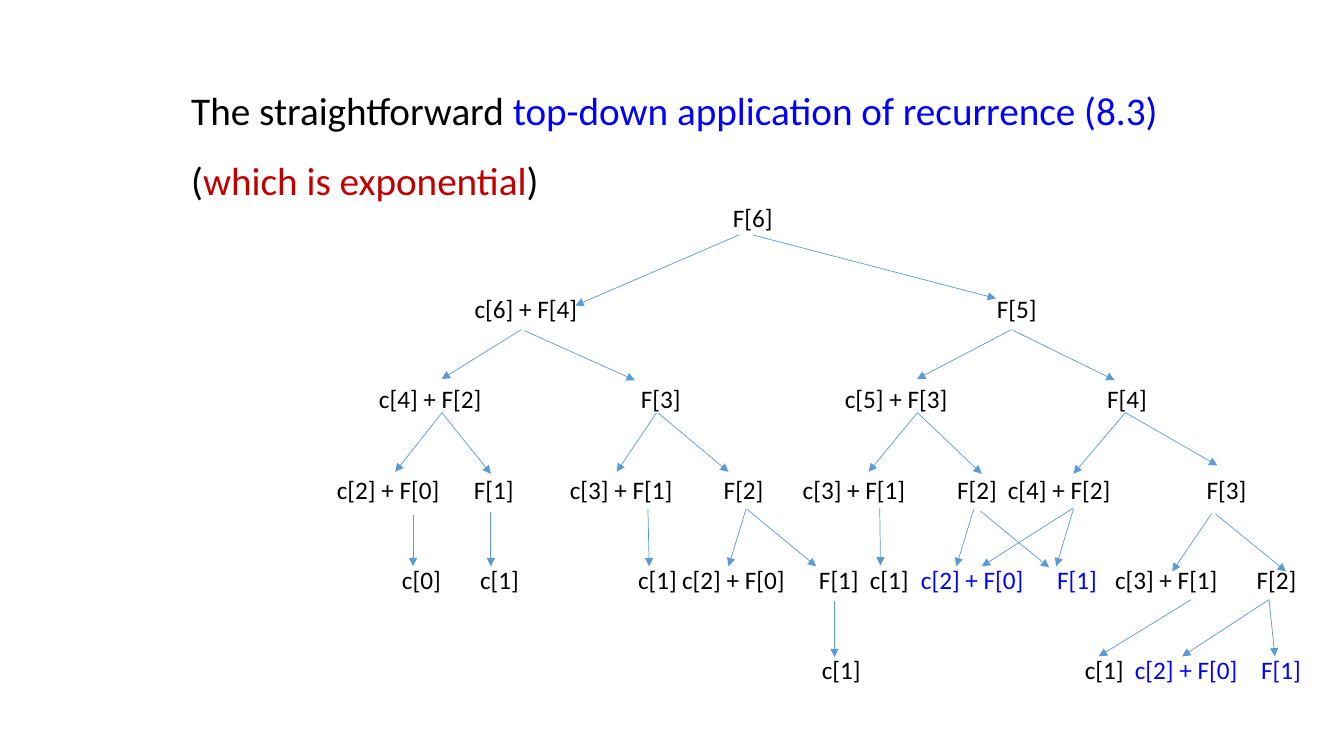
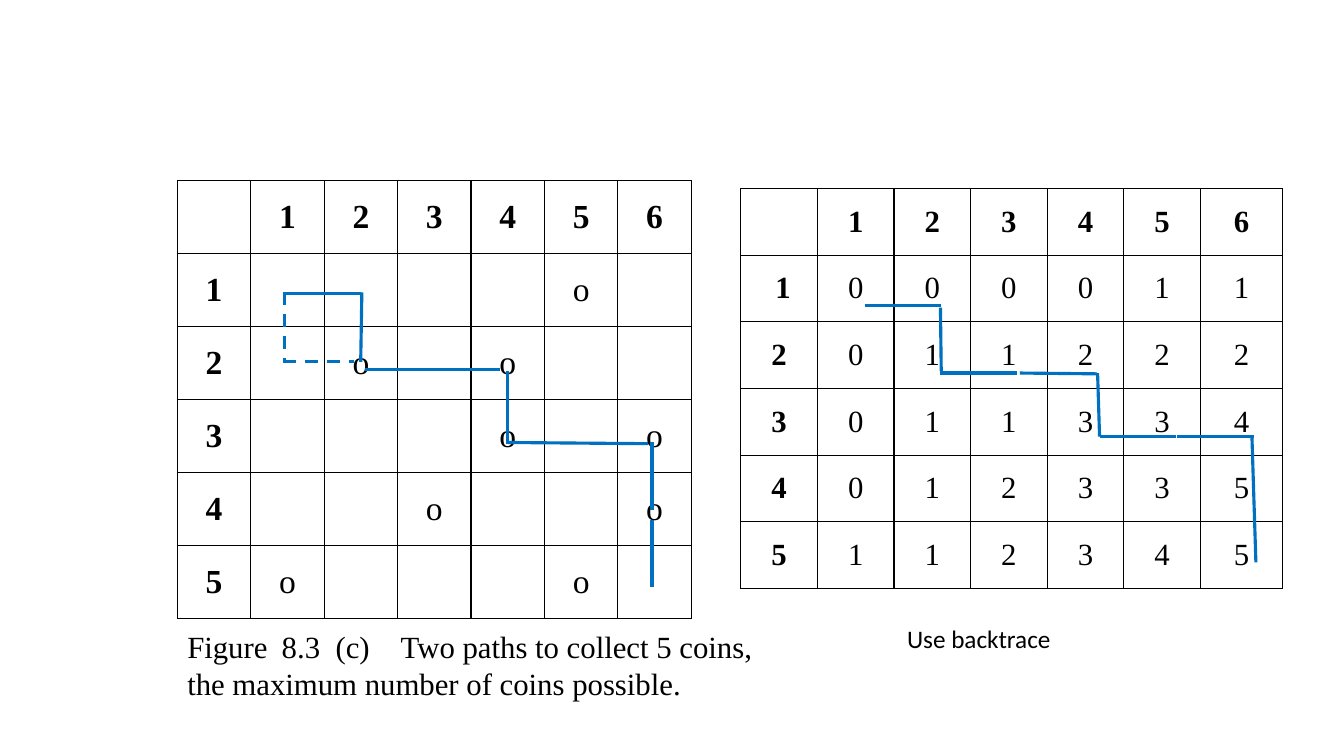
from dataclasses import dataclass
from typing import NamedTuple

from lxml import etree
from pptx import Presentation
from pptx.dml.color import RGBColor
from pptx.enum.dml import MSO_LINE
from pptx.enum.shapes import MSO_CONNECTOR
from pptx.enum.text import MSO_ANCHOR, MSO_AUTO_SIZE, PP_ALIGN
from pptx.oxml.ns import qn
from pptx.util import Cm, Pt

STRAIGHT = MSO_CONNECTOR.STRAIGHT
DASH = MSO_LINE.DASH
MIDDLE = MSO_ANCHOR.MIDDLE
GROW = MSO_AUTO_SIZE.SHAPE_TO_FIT_TEXT
CENTER = PP_ALIGN.CENTER

COLORS = {
    "ink": "000000",
    "paper": "FFFFFF",
    "blue": "0000FF",
    "red": "C00000",
    "arrow": "5B9BD5",
    "route": "0070C0",
}
SANS, SERIF = "Calibri", "Times New Roman"
TITLE_FONT = {"name": SANS, "size": Pt(28)}
BODY_FONT = {"name": SANS, "size": Pt(18)}
CAPTION_FONT = {"name": SERIF, "size": Pt(22)}
COIN_FONT = {"name": SERIF, "size": Pt(24)}
CELL_FORMAT = {
    "vertical_anchor": MIDDLE,
    "margin_left": Cm(0.18),
    "margin_right": Cm(0.18),
    "margin_top": 0,
    "margin_bottom": 0,
}
BORDER_SIDES = ("a:lnL", "a:lnR", "a:lnT", "a:lnB")
TEXT_INSET = 0.25


# Lengths in these records are centimetres
class Box(NamedTuple):
    left: float
    top: float
    width: float
    height: float


class Segment(NamedTuple):
    x1: float
    y1: float
    x2: float
    y2: float
    dashed: bool = False


class Piece(NamedTuple):
    text: str
    color: str = "ink"


class Node(NamedTuple):
    left: float
    text: str
    color: str = "ink"


@dataclass
class Grid:
    left: float
    top: float
    columns: list[float]
    row_height: float
    font: dict
    rows: list[list[str]]


# Recursion tree, one list of nodes for each level
TREE_BOX = Box(4.09, 4.98, 29.64, 13.34)
LEVELS = [
    [Node(18.47, "F[6]")],
    [Node(11.96, "c[6] + F[4]"), Node(25.12, "F[5]")],
    [Node(9.55, "c[4] + F[2]"), Node(16.15, "F[3]"),
     Node(21.29, "c[5] + F[3]"), Node(27.9, "F[4]")],
    [Node(8.49, "c[2] + F[0]"), Node(11.94, "F[1]"),
     Node(14.36, "c[3] + F[1]"), Node(18.24, "F[2]"),
     Node(20.23, "c[3] + F[1]"), Node(24.12, "F[2]"),
     Node(25.4, "c[4] + F[2]"), Node(30.41, "F[3]")],
    [Node(10.13, "c[0]"), Node(12.1, "c[1]"), Node(16.08, "c[1]"),
     Node(17.19, "c[2] + F[0]"), Node(20.64, "F[1]"), Node(21.92, "c[1]"),
     Node(23.21, "c[2] + F[0]", "blue"), Node(26.64, "F[1]", "blue"),
     Node(28.1, "c[3] + F[1]"), Node(31.67, "F[2]")],
    [Node(20.71, "c[1]"), Node(27.34, "c[1]"),
     Node(28.6, "c[2] + F[0]", "blue"), Node(31.78, "F[1]", "blue")],
]
CALLS = [
    # From F[6]
    Segment(18.62, 5.92, 14.5, 7.7), Segment(18.97, 5.92, 25.1, 7.52),
    # From F[4] and F[5]
    Segment(13.13, 8.31, 11.13, 9.55), Segment(13.21, 8.33, 16, 9.58),
    Segment(25.48, 8.31, 23.11, 9.55), Segment(25.5, 8.31, 28.09, 9.58),
    # From the third level
    Segment(11.13, 10.41, 9.96, 11.89), Segment(11.13, 10.39, 12.37, 11.94),
    Segment(16.54, 10.41, 15.54, 11.89), Segment(16.59, 10.41, 18.36, 11.89),
    Segment(23.11, 10.41, 21.89, 11.89), Segment(23.11, 10.39, 24.74, 11.94),
    Segment(28.35, 10.41, 27.05, 11.94), Segment(28.35, 10.39, 30.68, 11.73),
    # From the fourth level
    Segment(10.41, 12.98, 10.41, 14.27), Segment(12.37, 12.9, 12.37, 14.27),
    Segment(16.33, 12.83, 16.36, 14.27), Segment(18.8, 12.83, 18.36, 14.27),
    Segment(18.82, 12.83, 20.57, 14.27), Segment(24.54, 12.83, 24.1, 14.27),
    Segment(24.71, 12.88, 26.44, 14.3), Segment(27.05, 12.8, 24.74, 14.27),
    Segment(27.05, 12.83, 26.62, 14.27), Segment(22.17, 12.8, 22.19, 14.25),
    Segment(30.53, 12.95, 29.54, 14.4), Segment(30.63, 12.95, 32.41, 14.4),
    # From the fifth level
    Segment(30.02, 15.11, 27.69, 16.54), Segment(31.98, 15.11, 29.79, 16.54),
    Segment(31.98, 15.11, 32.13, 16.54), Segment(21.03, 15.14, 21.03, 16.56),
]

# Coin board and table of best totals
HEADER = ["", "1", "2", "3", "4", "5", "6"]
COINS = Grid(4.47, 4.55, [1.85] * 7, 1.84, COIN_FONT, [
    HEADER,
    ["1", "", "", "", "", "o", ""],
    ["2", "", "o", "", "o", "", ""],
    ["3", "", "", "", "o", "", "o"],
    ["4", "", "", "o", "", "", "o"],
    ["5", "o", "", "", "", "o", ""],
])
TOTALS = Grid(18.67, 4.75, [1.93] * 6 + [2.08], 1.68, CAPTION_FONT, [
    HEADER,
    [" 1", "0", "0", "0", "0", "1", "1"],
    ["2", "0", "1", "1", "2", "2", "2"],
    ["3", "0", "1", "1", "3", "3", "4"],
    ["4", "0", "1", "2", "3", "3", "5"],
    ["5", "1", "1", "2", "3", "4", "5"],
])
COIN_ROUTE = [
    Segment(7.16, 7.39, 9.09, 7.39), Segment(9.12, 7.37, 9.09, 9.12),
    Segment(7.16, 7.37, 7.16, 9.12, True), Segment(9.19, 9.32, 12.6, 9.32),
    Segment(12.8, 9.35, 12.8, 11.18), Segment(7.14, 9.12, 8.92, 9.12, True),
    Segment(12.8, 11.15, 16.33, 11.18), Segment(16.43, 11.15, 16.43, 12.85),
    Segment(16.43, 13.11, 16.43, 14.78),
]
BACKTRACE = [
    Segment(21.79, 7.7, 23.72, 7.7), Segment(23.7, 7.75, 23.72, 9.35),
    Segment(23.7, 9.4, 25.63, 9.4), Segment(25.7, 9.4, 27.64, 9.42),
    Segment(27.66, 9.4, 27.71, 11), Segment(27.71, 11, 29.64, 11),
    Segment(29.67, 11, 31.6, 11), Segment(31.55, 11, 31.6, 12.6),
    Segment(31.6, 12.6, 31.65, 14.17),
]


def rgb(color: str) -> RGBColor:
    return RGBColor.from_string(COLORS[color])


def apply(target, values: dict) -> None:
    for name, value in values.items():
        setattr(target, name, value)


def add_pieces(paragraph, pieces: list[Piece], font: dict) -> None:
    for piece in pieces:
        run = paragraph.add_run()
        run.text = piece.text
        apply(run.font, font)
        run.font.color.rgb = rgb(piece.color)


def set_tabs(paragraph, stops: list[float]) -> None:
    tabs = etree.SubElement(paragraph._p.get_or_add_pPr(), qn("a:tabLst"))
    for stop in stops:
        etree.SubElement(tabs, qn("a:tab"), pos=str(int(Cm(stop))), algn="l")


def add_frame(slide, box: Box):
    frame = slide.shapes.add_textbox(*map(Cm, box)).text_frame
    apply(frame, {"word_wrap": True, "auto_size": GROW})
    return frame


def add_text(slide, box: Box, pieces: list[Piece], font: dict):
    paragraph = add_frame(slide, box).paragraphs[0]
    add_pieces(paragraph, pieces, font)
    return paragraph


def add_tree(slide) -> None:
    frame = add_frame(slide, TREE_BOX)
    for depth, nodes in enumerate(LEVELS):
        level = frame.add_paragraph() if depth else frame.paragraphs[0]
        if depth:
            level.space_before = Pt(43)
        set_tabs(level, [node.left - TREE_BOX.left - TEXT_INSET for node in nodes])
        add_pieces(level, [Piece("\t" + node.text, node.color) for node in nodes],
                   BODY_FONT)


def add_lines(slide, segments: list[Segment], color: str, points: float,
              arrow: bool = False) -> None:
    for segment in segments:
        ends = map(Cm, segment[:4])
        connector = slide.shapes.add_connector(STRAIGHT, *ends)
        connector.line.color.rgb = rgb(color)
        connector.line.width = Pt(points)
        if segment.dashed:
            connector.line.dash_style = DASH
        properties = connector._element.spPr
        if arrow:
            etree.SubElement(properties.find(qn("a:ln")), qn("a:tailEnd"),
                             type="triangle")
        etree.SubElement(properties, qn("a:effectLst"))


def style_cell(cell) -> None:
    apply(cell, CELL_FORMAT)
    properties = cell._tc.get_or_add_tcPr()
    for side in BORDER_SIDES:
        border = etree.SubElement(properties, qn(side), w=str(int(Pt(1))))
        fill = etree.SubElement(border, qn("a:solidFill"))
        etree.SubElement(fill, qn("a:srgbClr"), val=COLORS["ink"])
    cell.fill.solid()
    cell.fill.fore_color.rgb = rgb("paper")


def add_grid(slide, grid: Grid) -> None:
    height = grid.row_height * len(grid.rows)
    table = slide.shapes.add_table(
        len(grid.rows), len(grid.columns), Cm(grid.left), Cm(grid.top),
        Cm(sum(grid.columns)), Cm(height)).table
    apply(table, {"first_row": False, "horz_banding": False})
    for column, width in zip(table.columns, grid.columns):
        column.width = Cm(width)
    for r, values in enumerate(grid.rows):
        table.rows[r].height = Cm(grid.row_height)
        for c, value in enumerate(values):
            cell = table.cell(r, c)
            style_cell(cell)
            if value:
                paragraph = cell.text_frame.paragraphs[0]
                paragraph.alignment = CENTER
                is_label = r == 0 or c == 0
                add_pieces(paragraph, [Piece(value)], {**grid.font, "bold": is_label})


def build_recursion(slide) -> None:
    title = add_text(slide, Box(4.57, 1.45, 24.97, 3.66), [
        Piece("The straightforward "),
        Piece("top-down application of recurrence (8.3) ", "blue"),
        Piece("("),
        Piece("which is exponential", "red"),
        Piece(")"),
    ], TITLE_FONT)
    title.line_spacing = 1.5
    add_tree(slide)
    add_lines(slide, CALLS, "arrow", 0.5, arrow=True)


def build_coin_paths(slide) -> None:
    add_grid(slide, COINS)
    add_lines(slide, COIN_ROUTE, "route", 2.25)
    caption = add_text(slide, Box(4.47, 15.7, 15.06, 2.13), [
        Piece("Figure\t8.3\t(c)\tTwo paths to collect 5 coins, "
              "the maximum number of coins possible."),
    ], CAPTION_FONT)
    set_tabs(caption, [2.38, 3.74, 5.38])
    add_grid(slide, TOTALS)
    add_lines(slide, BACKTRACE, "route", 2.25)
    add_text(slide, Box(22.61, 15.57, 8.94, 1.02), [Piece("Use backtrace")], BODY_FONT)


def main() -> None:
    deck = Presentation()
    apply(deck, {"slide_width": Cm(33.87), "slide_height": Cm(19.05)})
    blank = deck.slide_layouts[6]
    for build in (build_recursion, build_coin_paths):
        build(deck.slides.add_slide(blank))
    deck.save("out.pptx")


if __name__ == "__main__":
    main()
